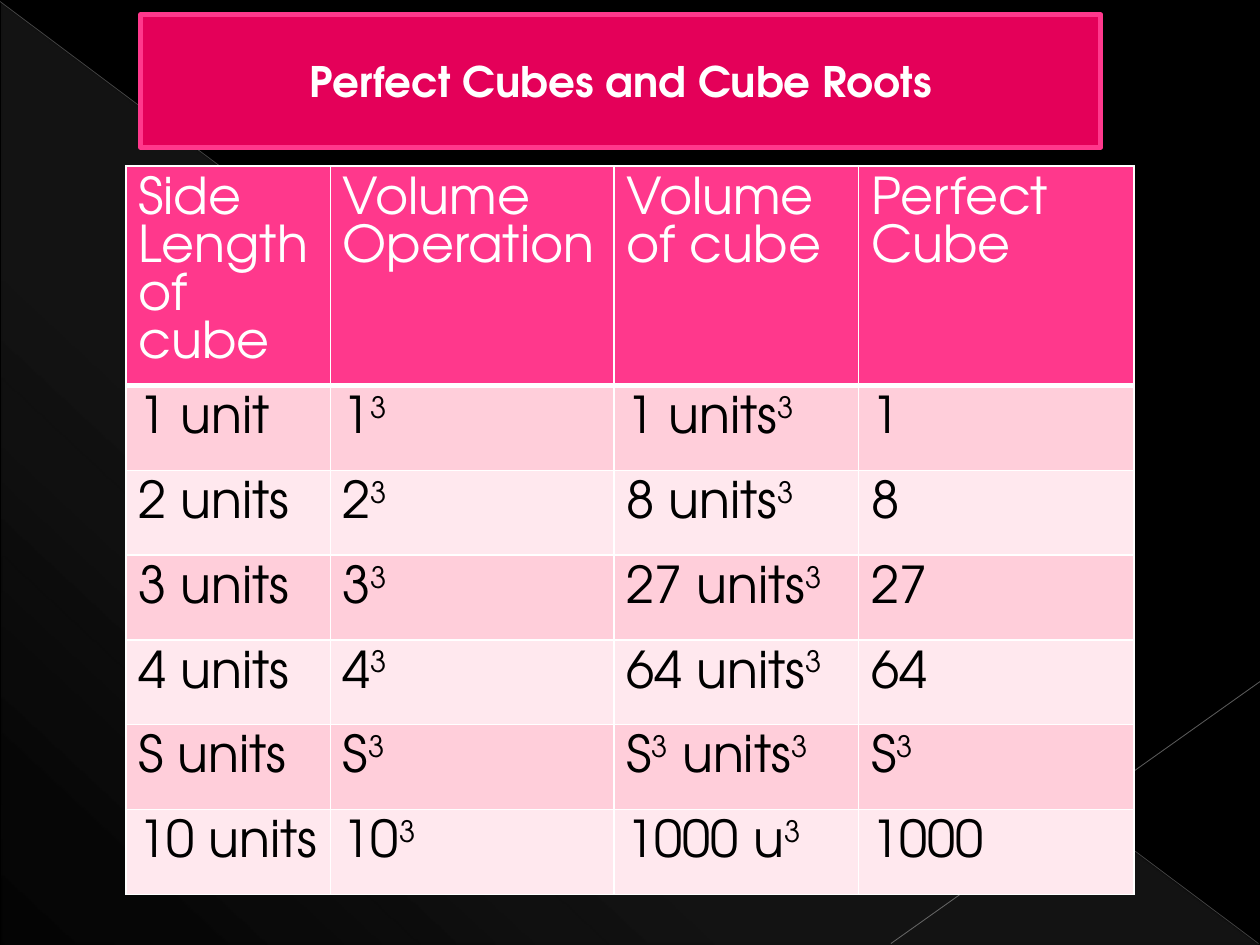
from typing import NamedTuple

from lxml.etree import SubElement
from pptx import Presentation
from pptx.dml.color import RGBColor
from pptx.enum.shapes import MSO_CONNECTOR, MSO_SHAPE
from pptx.enum.text import MSO_ANCHOR, PP_ALIGN
from pptx.oxml import parse_xml
from pptx.oxml.ns import nsdecls, qn
from pptx.util import Cm, Pt

FONT = "TeX Gyre Adventor"
COLORS = {
    "background": "000000",
    "glow": "D2D2D2",
    "white": "FFFFFF",
    "black": "000000",
    "title": "E40059",
    "pink": "FF388C",
    "dark_band": "FFCEDA",
    "light_band": "FFE8EE",
}
COL_WIDTHS = (4.12, 5.72, 4.93, 5.55)
HEADER_HEIGHT, ROW_HEIGHT = 4.42, 1.71
# Text between carets is superscript.
ROWS = (
    ("Side Length of cube", "Volume Operation", "Volume of cube", "Perfect Cube"),
    ("1 unit", "1^3^", "1 units^3^", "1"),
    ("2 units", "2^3^", "8 units^3^", "8"),
    ("3 units", "3^3^", "27 units^3^", "27"),
    ("4 units", "4^3^", "64 units^3^", "64"),
    ("S units", "S^3^", "S^3^ units^3^", "S^3^"),
    ("10 units", "10^3^", "1000 u^3^", "1000"),
)


class Ray(NamedTuple):
    x1: float
    y1: float
    x2: float
    y2: float
    color: str
    width: float
    opacity: int


RAYS = (
    Ray(0, 0.03, 25.37, 19.02, "BFBFBF", 0.39, 35),
    Ray(25.4, 13.74, 17.96, 19.02, "C6C6C6", 0.47, 45),
)


def rgb(name: str) -> RGBColor:
    return RGBColor.from_string(COLORS[name])


def style_run(r, size: float, color: str, bold: bool = False) -> None:
    r.font.name = FONT
    r.font.size = Pt(size)
    r.font.bold = bold
    r.font.color.rgb = rgb(color)


def add_glow(slide) -> None:
    """Add the corner triangle with its translucent gradient."""
    sp = slide.shapes.add_shape(
        MSO_SHAPE.RIGHT_TRIANGLE, Cm(0.03), Cm(0.05), Cm(25.35), Cm(18.99))
    sp.shadow.inherit = False
    sp.line.fill.background()
    stops = "".join(
        f'<a:gs pos="{pos}000"><a:srgbClr val="{COLORS["glow"]}">'
        f'<a:alpha val="{opacity}000"/></a:srgbClr></a:gs>'
        for pos, opacity in ((0, 10), (70, 8), (100, 1)))
    gradient = parse_xml(
        f'<a:gradFill {nsdecls("a")} rotWithShape="1"><a:gsLst>{stops}</a:gsLst>'
        f'<a:lin ang="{133 * 60000}" scaled="0"/></a:gradFill>')
    sp.element.spPr.find(qn("a:prstGeom")).addnext(gradient)


def add_ray(slide, ray: Ray) -> None:
    line = slide.shapes.add_connector(
        MSO_CONNECTOR.STRAIGHT, Cm(ray.x1), Cm(ray.y1), Cm(ray.x2), Cm(ray.y2))
    line.line.color.rgb = RGBColor.from_string(ray.color)
    line.line.width = Pt(ray.width)
    spPr = line._element.spPr
    color = next(spPr.iter(qn("a:srgbClr")))
    SubElement(color, qn("a:alpha")).set("val", str(ray.opacity * 1000))
    SubElement(spPr, qn("a:effectLst"))


def add_title(slide) -> None:
    sp = slide.shapes.add_shape(
        MSO_SHAPE.RECTANGLE, Cm(2.84), Cm(0.3), Cm(19.35), Cm(2.67))
    sp.shadow.inherit = False
    sp.fill.solid()
    sp.fill.fore_color.rgb = rgb("title")
    sp.line.color.rgb = rgb("pink")
    sp.line.width = Pt(3)
    tf = sp.text_frame
    tf.word_wrap = True
    tf.vertical_anchor = MSO_ANCHOR.MIDDLE
    tf.text = "Perfect Cubes and Cube Roots"
    p = tf.paragraphs[0]
    p.alignment = PP_ALIGN.CENTER
    style_run(p.runs[0], 24, "white", bold=True)


def set_borders(cell, bottom: float) -> None:
    """Draw white borders, which must precede the fill in the cell's XML."""
    tcPr = cell._tc.get_or_add_tcPr()
    widths = {"lnL": 1, "lnR": 1, "lnT": 1, "lnB": bottom}
    for i, (tag, width) in enumerate(widths.items()):
        tcPr.insert(i, parse_xml(
            f'<a:{tag} {nsdecls("a")} w="{Pt(width)}"><a:solidFill>'
            f'<a:srgbClr val="{COLORS["white"]}"/></a:solidFill></a:{tag}>'))


def fill_cell(cell, text: str, fill: str, color: str, bottom: float) -> None:
    cell.fill.solid()
    cell.fill.fore_color.rgb = rgb(fill)
    set_borders(cell, bottom)
    cell.margin_left = cell.margin_right = Cm(0.25)
    cell.margin_top, cell.margin_bottom = Cm(0.2), Cm(0.15)
    p = cell.text_frame.paragraphs[0]
    p.line_spacing = Pt(27.4)
    for i, part in enumerate(text.split("^")):
        if part:
            r = p.add_run()
            r.text = part
            style_run(r, 29, color)
            if i % 2:
                r.font._element.set("baseline", "30000")


def add_cube_table(slide) -> None:
    height = HEADER_HEIGHT + ROW_HEIGHT * (len(ROWS) - 1)
    table = slide.shapes.add_table(
        len(ROWS), len(COL_WIDTHS), Cm(2.54), Cm(3.35),
        Cm(sum(COL_WIDTHS)), Cm(height)).table
    for column, width in zip(table.columns, COL_WIDTHS):
        column.width = Cm(width)
    for i, texts in enumerate(ROWS):
        table.rows[i].height = Cm(ROW_HEIGHT if i else HEADER_HEIGHT)
        if i == 0:
            fill, color, bottom = "pink", "white", 3
        else:
            fill = "dark_band" if i % 2 else "light_band"
            color, bottom = "black", 1
        for j, text in enumerate(texts):
            fill_cell(table.cell(i, j), text, fill, color, bottom)


def main() -> None:
    prs = Presentation()
    prs.slide_width, prs.slide_height = Cm(25.4), Cm(19.05)
    s = prs.slides.add_slide(prs.slide_layouts[6])
    s.background.fill.solid()
    s.background.fill.fore_color.rgb = rgb("background")
    add_glow(s)
    for ray in RAYS:
        add_ray(s, ray)
    add_title(s)
    add_cube_table(s)
    prs.save("out.pptx")


if __name__ == "__main__":
    main()
